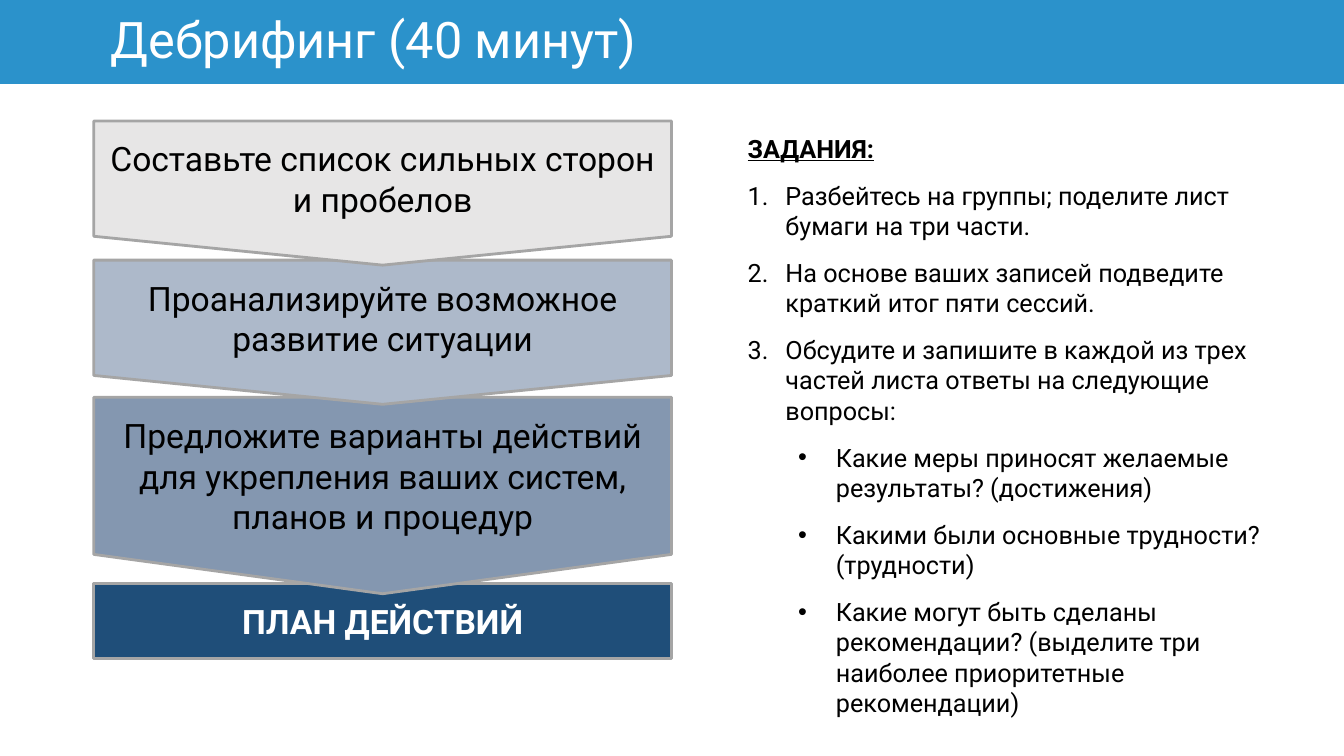
"""Builds the debriefing slide: a stack of steps beside a list of tasks."""
from lxml.etree import SubElement
from pptx import Presentation
from pptx.dml.color import RGBColor
from pptx.enum.shapes import MSO_SHAPE
from pptx.enum.text import MSO_ANCHOR, PP_ALIGN
from pptx.oxml.ns import qn
from pptx.util import Pt

COLORS = {
    "banner": "2B92CB", "outline": "A5A5A5", "white": "FFFFFF", "black": "000000",
    "strengths": "E7E6E6", "analysis": "ADB9CA", "options": "8497B0", "plan": "1F4E79",
}
FONT = "Roboto"
TITLE = "Дебрифинг (40 минут)"
POINTER = MSO_SHAPE.FLOWCHART_OFFPAGE_CONNECTOR
STEPS = [
    ("Составьте список сильных сторон и пробелов", "strengths", POINTER, 86.4, 103),
    ("Проанализируйте возможное развитие ситуации", "analysis", POINTER, 185.8, 103),
    ("Предложите варианты действий для укрепления ваших систем, планов и процедур",
     "options", POINTER, 283.7, 140.4),
    ("ПЛАН ДЕЙСТВИЙ", "plan", MSO_SHAPE.RECTANGLE, 416.9, 53.3),
]
TASKS = [
    ("heading", "ЗАДАНИЯ:"),
    ("number", "Разбейтесь на группы; поделите лист бумаги на три части."),
    ("number", "На основе ваших записей подведите краткий итог пяти сессий."),
    ("number", "Обсудите и запишите в каждой из трех частей листа ответы на следующие вопросы:"),
    ("bullet", "Какие меры приносят желаемые результаты? (достижения)"),
    ("bullet", "Какими были основные трудности? (трудности)"),
    ("bullet", "Какие могут быть сделаны рекомендации? "
               "(выделите три наиболее приоритетные рекомендации)"),
]
WIDTH, HEIGHT = 960, 540
COLUMN_WIDTH = 412.6
STACK_LEFT, TASKS_LEFT = 67, 527
HANGING, BULLET_MARGIN = 27, 63


def color(name):
    return RGBColor.from_string(COLORS[name])


def style(para, size, color_name, bold=False, underline=False):
    for span in para.runs:
        font = span.font
        font.name, font.size, font.bold, font.underline = FONT, Pt(size), bold, underline
        font.color.rgb = color(color_name)


def add_block(page, kind, bounds, fill, text, size, text_color, bold=False):
    box = page.shapes.add_shape(kind, *map(Pt, bounds))
    box.shadow.inherit = False
    box.fill.solid()
    box.fill.fore_color.rgb = color(fill)
    frame = box.text_frame
    frame.text = text
    frame.word_wrap = True
    frame.vertical_anchor = MSO_ANCHOR.MIDDLE
    para = frame.paragraphs[0]
    para.alignment = PP_ALIGN.CENTER
    style(para, size, text_color, bold)
    return box


def add_banner(page):
    box = add_block(page, MSO_SHAPE.RECTANGLE, (0, 0, WIDTH, 60), "banner", TITLE, 36, "white")
    box.line.fill.background()
    box.text_frame.margin_left = Pt(79.2)
    para = box.text_frame.paragraphs[0]
    para.alignment = PP_ALIGN.LEFT
    para.line_spacing = 0.9


def add_steps(page):
    for text, fill, kind, top, height in reversed(STEPS):
        final = fill == "plan"
        box = add_block(page, kind, (STACK_LEFT, top, COLUMN_WIDTH, height), fill, text, 24,
                        "white" if final else "black", final)
        box.line.color.rgb = color("outline")
        box.line.width = Pt(2)


def mark(para, kind):
    properties = para._p.get_or_add_pPr()
    margin = BULLET_MARGIN if kind == "bullet" else HANGING
    properties.set("marL", str(Pt(margin)))
    properties.set("indent", str(-Pt(HANGING)))
    if kind == "bullet":
        para.level = 1
        SubElement(properties, qn("a:buFont"), typeface="Arial")
        SubElement(properties, qn("a:buChar"), char="•")
    else:
        SubElement(properties, qn("a:buAutoNum"), type="arabicPeriod")


def add_tasks(page):
    box = page.shapes.add_textbox(Pt(TASKS_LEFT), Pt(91.4), Pt(COLUMN_WIDTH), Pt(384.5))
    frame = box.text_frame
    frame.word_wrap = True
    for index, (kind, text) in enumerate(TASKS):
        para = frame.add_paragraph() if index else frame.paragraphs[0]
        para.text = text
        para.space_after = Pt(12)
        heading = kind == "heading"
        style(para, 18, "black", heading, heading)
        if not heading:
            mark(para, kind)


def main():
    deck = Presentation()
    deck.slide_width, deck.slide_height = Pt(WIDTH), Pt(HEIGHT)
    page = deck.slides.add_slide(deck.slide_layouts[6])
    add_steps(page)
    add_banner(page)
    add_tasks(page)
    deck.save("out.pptx")


if __name__ == "__main__":
    main()
